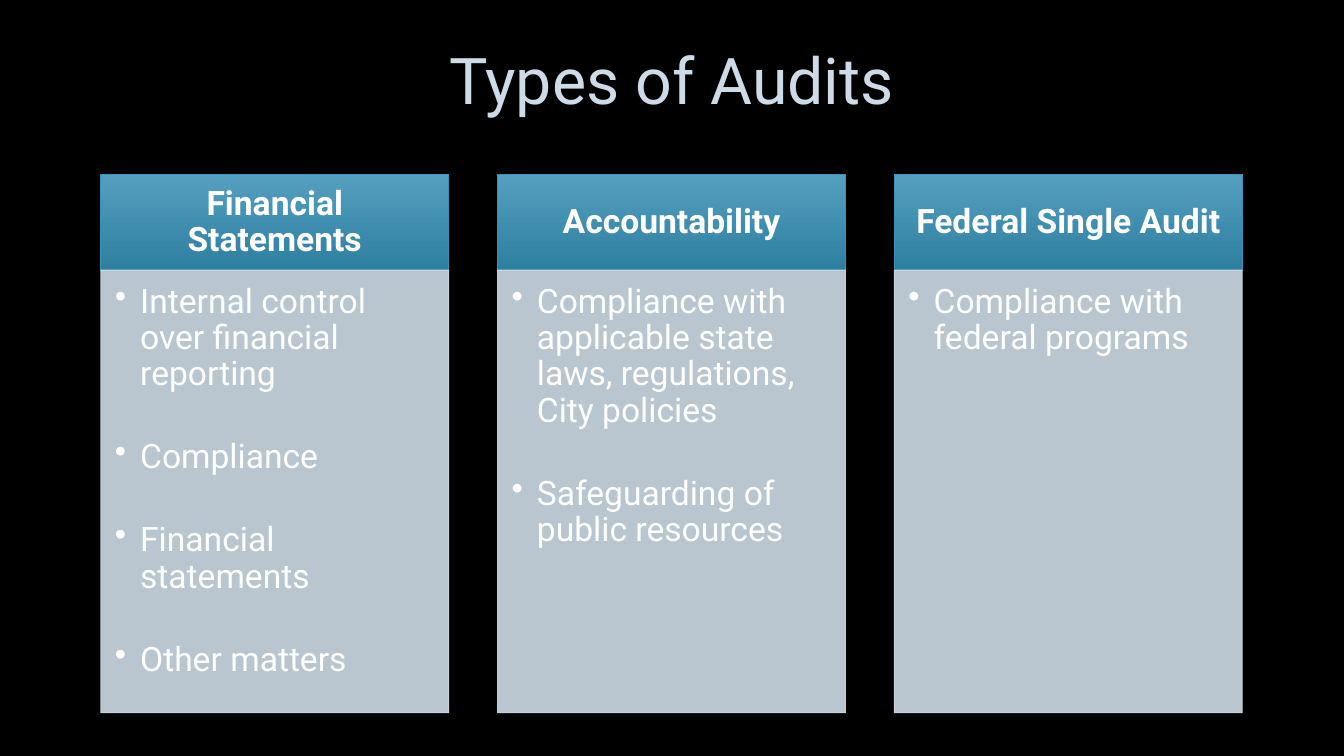
from lxml import etree
from pptx import Presentation
from pptx.dml.color import RGBColor
from pptx.enum.shapes import MSO_SHAPE as SHAPE
from pptx.enum.text import MSO_ANCHOR as ANCHOR, PP_ALIGN as ALIGN
from pptx.oxml import parse_xml
from pptx.oxml.ns import nsdecls, qn
from pptx.util import Inches, Pt

LEFT, TOP = 1, 1.73
COL_W, COL_PITCH = 3.45, 3.935
HEAD_H, BODY_H = 0.95, 4.39
COLUMNS = [
    ("Financial Statements", ["Internal control over financial reporting", "Compliance",
                              "Financial statements", "Other matters"]),
    ("Accountability", ["Compliance with applicable state laws, regulations, City policies",
                        "Safeguarding of public resources"]),
    ("Federal Single Audit", ["Compliance with federal programs"]),
]


def rgb(value):
    return RGBColor.from_string(value)


def write(sp, lines, size=24, color="FFFFFF", bold=False, align=ALIGN.CENTER,
          anchor=ANCHOR.MIDDLE, insets=(0.1, 0.05, 0.1, 0.05), bullet=False, gap=0):
    tf = sp.text_frame
    tf.word_wrap = True
    tf.vertical_anchor = anchor
    tf.margin_left, tf.margin_top, tf.margin_right, tf.margin_bottom = map(Inches, insets)
    for i, line in enumerate(lines):
        p = tf.paragraphs[0] if i == 0 else tf.add_paragraph()
        p.alignment, p.line_spacing = align, 0.9
        p.space_before = Pt(0)
        p.space_after = Pt(gap if i < len(lines) - 1 else 0)
        if bullet:
            pPr = p._p.get_or_add_pPr()
            pPr.set("marL", str(Inches(0.25)))
            pPr.set("indent", str(-Inches(0.25)))
            etree.SubElement(pPr, qn("a:buChar")).set("char", "•")
        r = p.add_run()
        r.text = line
        r.font.name, r.font.size, r.font.bold = "Roboto", Pt(size), bold
        r.font.color.rgb = rgb(color)


prs = Presentation()
prs.slide_width, prs.slide_height = Inches(13.33), Inches(7.5)
s = prs.slides.add_slide(prs.slide_layouts[5])
s.background.fill.solid()
s.background.fill.fore_color.rgb = rgb("000000")

# Title with a faint outline
title = s.shapes.title
title.left, title.top, title.width, title.height = map(Inches, (1, 0.12, 11.32, 1.42))
write(title, ["Types of Audits"], size=46, color="CEDBE6")
title.text_frame.paragraphs[0].runs[0].font._element.insert(0, parse_xml(
    f'<a:ln {nsdecls("a")} w="9525"><a:solidFill><a:srgbClr val="404040">'
    '<a:alpha val="10000"/></a:srgbClr></a:solidFill></a:ln>'))

for i, (heading, points) in enumerate(COLUMNS):
    x = LEFT + i * COL_PITCH

    # Gradient heading with a soft shadow
    head = s.shapes.add_shape(SHAPE.RECTANGLE, *map(Inches, (x, TOP, COL_W, HEAD_H)))
    head.fill.gradient()
    head.fill.gradient_angle = 270
    for stop, color in zip(head.fill.gradient_stops, ("559FC0", "2D7FA0")):
        stop.color.rgb = rgb(color)
    head.line.color.rgb = rgb("3494BA")
    head.line.width = Pt(0.75)
    head.shadow.inherit = False
    head._element.spPr.find(qn("a:effectLst")).append(parse_xml(
        f'<a:outerShdw {nsdecls("a")} blurRad="63500" dist="25400" dir="5400000">'
        '<a:srgbClr val="000000"><a:alpha val="60000"/></a:srgbClr></a:outerShdw>'))
    write(head, [heading], bold=True, insets=(0.19, 0.11, 0.19, 0.11))

    # Translucent panel with the bullets
    body = s.shapes.add_shape(SHAPE.RECTANGLE, *map(Inches, (x, TOP + HEAD_H, COL_W, BODY_H)))
    body.shadow.inherit = False
    body.fill.solid()
    body.fill.fore_color.rgb = rgb("CEDCE7")
    body.line.color.rgb = rgb("CEDCE7")
    body.line.width = Pt(0.75)
    for clr in body._element.spPr.iter(qn("a:srgbClr")):
        etree.SubElement(clr, qn("a:alpha")).set("val", "90000")
    write(body, points, align=ALIGN.LEFT, anchor=ANCHOR.TOP,
          insets=(0.14, 0.14, 0.19, 0.21), bullet=True, gap=33.4)

prs.save("out.pptx")
